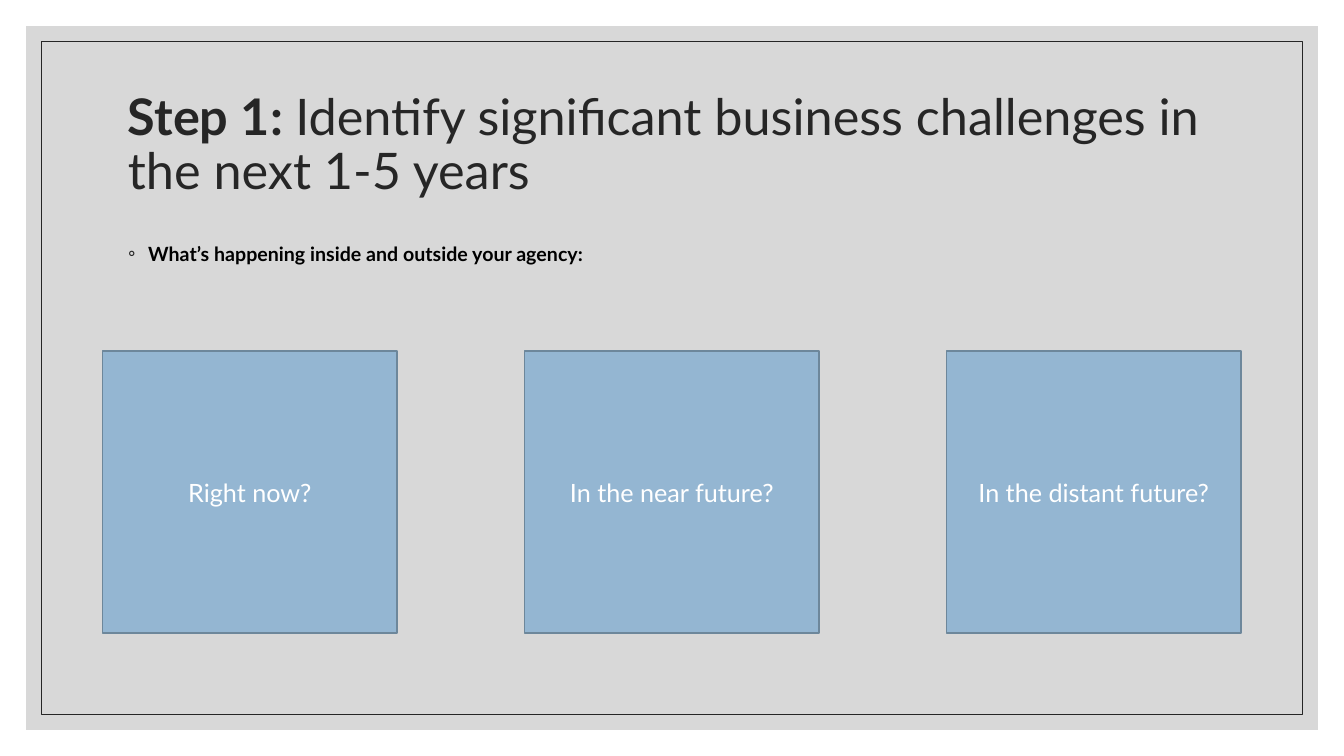
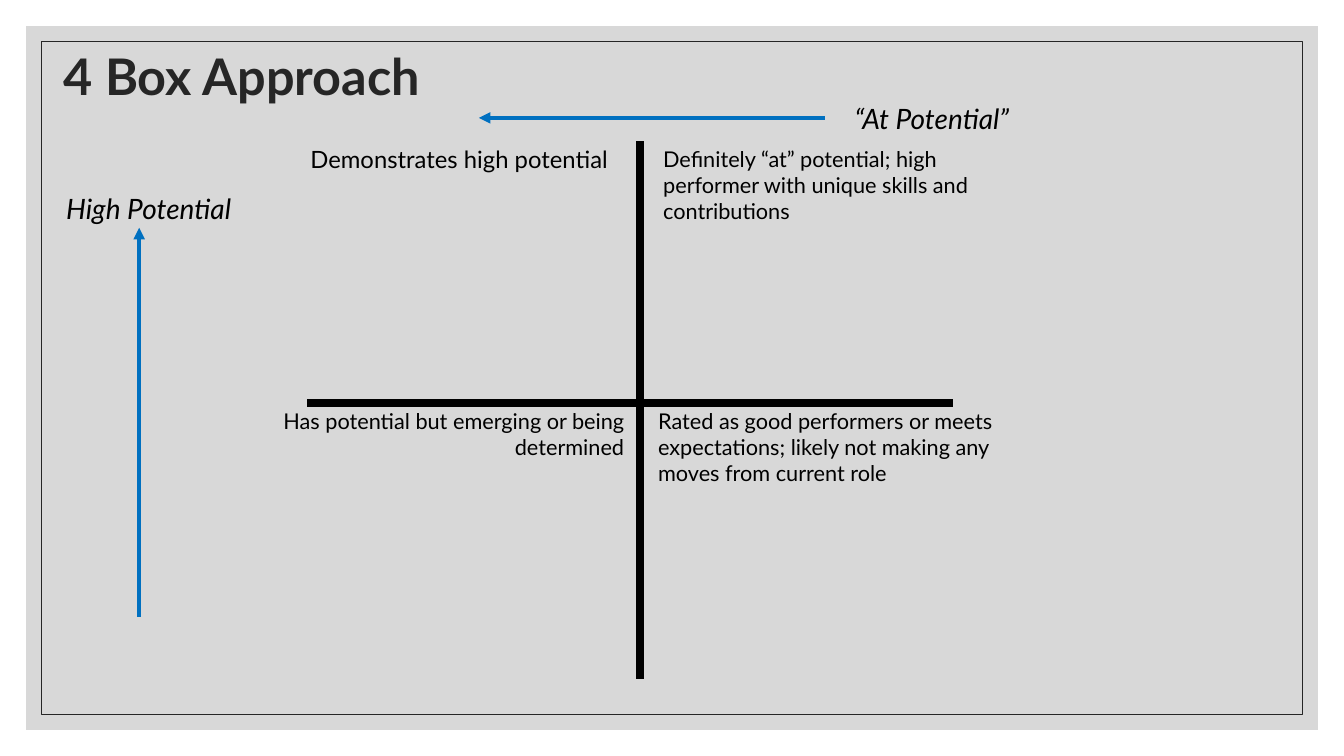
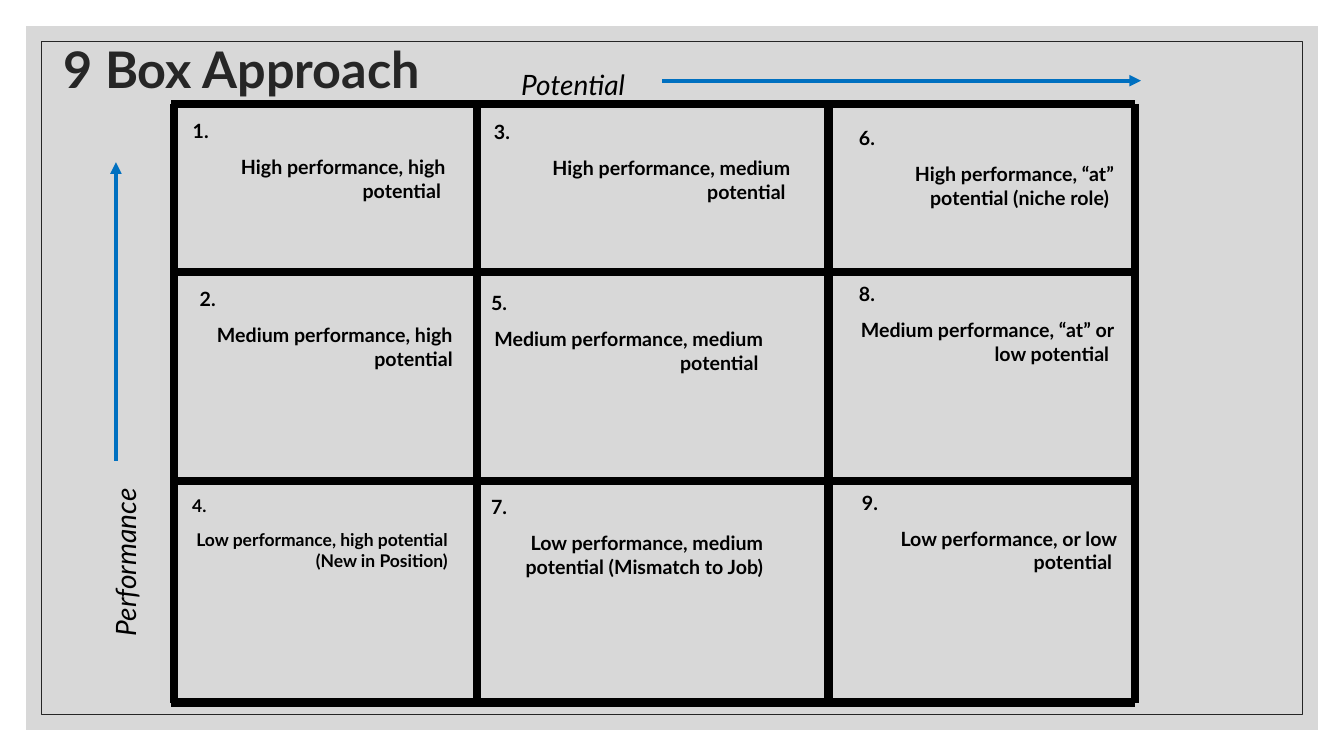
"""Build three slides on workforce planning and the 4 and 9 box approaches."""
from dataclasses import dataclass, replace
from typing import NamedTuple

from lxml import etree
from pptx import Presentation
from pptx import util as u
from pptx.dml import color
from pptx.enum import shapes, text
from pptx.oxml import ns
from pptx.slide import Slide

WIDTH, HEIGHT = 960, 540
FONT = "Lato"
BLACK, WHITE, DARK = "000000", "FFFFFF", "262626"
PANEL, TILE, TILE_EDGE, ARROW = "BFBFBF", "94B6D2", "6D879B", "0070C0"
LEFT, CENTER, RIGHT = text.PP_ALIGN.LEFT, text.PP_ALIGN.CENTER, text.PP_ALIGN.RIGHT
TOP, MIDDLE = text.MSO_ANCHOR.TOP, text.MSO_ANCHOR.MIDDLE


class Box(NamedTuple):
    left: float
    top: float
    width: float
    height: float


class Line(NamedTuple):
    x1: float
    y1: float
    x2: float
    y2: float


class Run(NamedTuple):
    words: str
    bold: bool = False


@dataclass(frozen=True)
class Style:
    size: float
    color: str = BLACK
    italic: bool = False
    align: text.PP_ALIGN = LEFT
    spacing: float = 1.0
    before: float = 0


class Note(NamedTuple):
    box: Box
    words: str
    style: Style


class Cell(NamedTuple):
    number: int
    left: float
    top: float
    width: float
    words: str
    size: float = 14


TITLE = Style(36, DARK, spacing=0.9)
BULLET = Style(14, spacing=1.2)
AXIS = Style(20, italic=True, align=CENTER, spacing=1.2)
TILE_LABEL = Style(18, WHITE, align=CENTER)
QUADRANT = Style(15.5)

TILES = ["Right now?", "In the near future?", "In the distant future?"]

QUADRANTS = [
    Note(Box(182.2, 98, 263.5, 47.5), "Demonstrates high potential ",
         Style(17, align=RIGHT, spacing=1.1)),
    Note(Box(189.4, 288, 263.5, 47.5), "Has potential but emerging or being determined",
         replace(QUADRANT, align=RIGHT)),
    Note(Box(463, 288, 283, 77),
         "Rated as good performers or meets expectations; "
         "likely not making any moves from current role", QUADRANT),
    Note(Box(466.6, 100.8, 279.4, 67),
         "Definitely “at” potential; high performer with unique skills and contributions",
         QUADRANT),
]

GRID_X = [124.6, 340.6, 591.8, 810.7]
GRID_Y = [74.2, 194.4, 343.4, 501.8]
GRID_OVERHANG = 2.2

CELLS = [
    Cell(1, 113.8, 81.4, 211.7, "High performance, high potential "),
    Cell(2, 118.8, 201.6, 211.7, "Medium performance, high potential"),
    Cell(4, 115.2, 350, 211.7, "Low performance, high potential (New in Position)", 12.5),
    Cell(3, 329, 82, 242.7, "High performance, medium potential "),
    Cell(5, 326.9, 204.5, 225.4, "Medium performance, medium potential "),
    Cell(7, 326.9, 350, 225.4, "Low performance, medium potential (Mismatch to Job)"),
    Cell(6, 589.7, 86.4, 213.1, "High performance, “at” potential (niche role) "),
    Cell(8, 589.7, 198, 213.1, "Medium performance, “at” or low potential "),
    Cell(9, 591.8, 347, 213.1, "Low performance, or low potential "),
]


def rgb(value: str) -> color.RGBColor:
    """Turn a hex string into a colour."""
    return color.RGBColor.from_string(value)


def points(values) -> list:
    """Turn numbers into lengths in points."""
    return [u.Pt(value) for value in values]


def write(paragraph, runs: list[Run], style: Style) -> None:
    """Format a paragraph and add its runs."""
    paragraph.alignment = style.align
    paragraph.line_spacing = style.spacing
    paragraph.space_before = u.Pt(style.before)
    for words, bold in runs:
        run = paragraph.add_run()
        run.text = words
        font = run.font
        font.name, font.size = FONT, u.Pt(style.size)
        font.bold, font.italic = bold, style.italic
        font.color.rgb = rgb(style.color)


def prepare(shape, anchor=TOP):
    """Set wrapping and anchor of a shape and return its first paragraph."""
    frame = shape.text_frame
    frame.word_wrap = True
    frame.auto_size = text.MSO_AUTO_SIZE.NONE
    frame.vertical_anchor = anchor
    return frame.paragraphs[0]


def indent(paragraph, left: float, first: float = 0, bullet: str = "") -> None:
    """Set the indents of a paragraph and its bullet, if any."""
    properties = paragraph._p.get_or_add_pPr()
    properties.set("marL", str(u.Pt(left)))
    properties.set("indent", str(u.Pt(first)))
    if bullet:
        holder = etree.SubElement(properties, ns.qn("a:buClr"))
        etree.SubElement(holder, ns.qn("a:srgbClr"), val=DARK)
        etree.SubElement(properties, ns.qn("a:buFont"), typeface=FONT)
        etree.SubElement(properties, ns.qn("a:buChar"), char=bullet)
    else:
        etree.SubElement(properties, ns.qn("a:buNone"))


def place(shape, box: Box) -> None:
    """Move and size a placeholder."""
    shape.left, shape.top, shape.width, shape.height = points(box)


def add_title(slide: Slide, left: float, top: float, runs: list[Run]) -> None:
    """Fill and place the title."""
    title = slide.shapes.title
    place(title, Box(left, top, 792, 108))
    write(prepare(title, MIDDLE), runs, TITLE)


def add_note(slide: Slide, note: Note) -> None:
    """Add a text box with one paragraph."""
    shape = slide.shapes.add_textbox(*points(note.box))
    write(prepare(shape), [Run(note.words)], note.style)


def add_axis_labels(slide: Slide, vertical: Note, horizontal: Note, rotation: float = 0) -> None:
    """Put the vertical axis label in the body and the other in a text box."""
    body = slide.placeholders[1]
    place(body, vertical.box)
    body.rotation = rotation
    paragraph = prepare(body)
    indent(paragraph, 0)
    write(paragraph, [Run(vertical.words)], vertical.style)
    add_note(slide, horizontal)


def axis_label(left: float, top: float, words: str) -> Note:
    """Describe an axis label."""
    return Note(Box(left, top, 180.7, 47.5), words, AXIS)


def add_line(slide: Slide, line: Line, hue: str = BLACK, weight: float = 5.75,
             arrow: bool = False) -> None:
    """Draw a straight line, with an arrowhead at its end if asked."""
    connector = slide.shapes.add_connector(shapes.MSO_CONNECTOR.STRAIGHT, *points(line))
    connector.line.color.rgb = rgb(hue)
    connector.line.width = u.Pt(weight)
    if arrow:
        etree.SubElement(connector.get_or_add_ln(), ns.qn("a:tailEnd"), type="triangle")
    etree.SubElement(connector.element.spPr, ns.qn("a:effectLst"))


def add_arrow(slide: Slide, line: Line) -> None:
    """Draw an axis arrow."""
    add_line(slide, line, ARROW, 2.75, arrow=True)


def add_rectangle(slide: Slide, box: Box, fill: str = "", edge: str = "", weight: float = 1):
    """Draw a rectangle without shadow."""
    shape = slide.shapes.add_shape(shapes.MSO_SHAPE.RECTANGLE, *points(box))
    shape.shadow.inherit = False
    if fill:
        shape.fill.solid()
        shape.fill.fore_color.rgb = rgb(fill)
    else:
        shape.fill.background()
    if edge:
        shape.line.color.rgb = rgb(edge)
        shape.line.width = u.Pt(weight)
    else:
        shape.line.fill.background()
    return shape


def inset(margin: float) -> Box:
    """Give the slide area less a margin on all sides."""
    return Box(margin, margin, WIDTH - 2 * margin, HEIGHT - 2 * margin)


def move_frame_to_master(presentation, slide: Slide) -> None:
    """Draw the shared panel and border and move them behind the master."""
    panel = add_rectangle(slide, inset(18.7), fill=PANEL)
    tone = panel.element.xpath("./p:spPr/a:solidFill/a:srgbClr")[0]
    etree.SubElement(tone, ns.qn("a:alpha"), val="60000")
    border = add_rectangle(slide, inset(29.5), edge=DARK, weight=0.5)
    tree = presentation.slide_master.shapes.element
    for position, shape in enumerate((panel, border)):
        shape.element.xpath("./p:nvSpPr/p:cNvPr")[0].set("id", str(100 + position))
        tree.insert(2 + position, shape.element)


def build_challenges(slide: Slide) -> None:
    """Fill the slide on business challenges."""
    add_title(slide, 84.2, 50.4, [
        Run("Step 1: ", True),
        Run("Identify significant business challenges in the next 1-5 years"),
    ])
    body = slide.placeholders[1]
    place(body, Box(84.2, 165.6, 792, 303))
    paragraph = prepare(body)
    indent(paragraph, 14.4, -14.4, "◦")
    write(paragraph, [Run("What’s happening inside and outside your agency:", True)], BULLET)
    for index, words in enumerate(TILES):
        box = Box(73.4 + index * 301.4, 250.6, 210.2, 201.6)
        tile = add_rectangle(slide, box, TILE, TILE_EDGE)
        write(prepare(tile, MIDDLE), [Run(words)], TILE_LABEL)


def build_four_box(slide: Slide) -> None:
    """Fill the slide on the 4 box approach."""
    add_title(slide, 38.2, 2.9, [Run("4 Box Approach", True)])
    add_line(slide, Line(457.2, 100.8, 457.2, 485.3))
    add_line(slide, Line(680.4, 288, 219.6, 288))
    add_arrow(slide, Line(99.4, 440.6, 99.4, 162.7))
    add_arrow(slide, Line(589, 84.2, 342, 84.2))
    add_axis_labels(slide, axis_label(15.8, 128.2, "High Potential"),
                    axis_label(575.3, 64.1, "“At Potential”"))
    for note in QUADRANTS:
        add_note(slide, note)


def add_cell(slide: Slide, cell: Cell) -> None:
    """Add the number and description of one grid cell."""
    shape = slide.shapes.add_textbox(*points((cell.left, cell.top, cell.width, 72)))
    style = Style(cell.size)
    number = prepare(shape)
    indent(number, 1.2 * cell.size)
    write(number, [Run(f"{cell.number}.", True)], style)
    description = shape.text_frame.add_paragraph()
    write(description, [Run(cell.words, True)], replace(style, align=RIGHT, before=9))


def build_nine_box(slide: Slide) -> None:
    """Fill the slide on the 9 box approach."""
    add_title(slide, 38.2, -2.2, [Run("9 Box Approach", True)])
    for x in GRID_X:
        add_line(slide, Line(x, GRID_Y[0], x, GRID_Y[-1]))
    for y in GRID_Y:
        add_line(slide, Line(GRID_X[0] - GRID_OVERHANG, y, GRID_X[-1], y))
    add_arrow(slide, Line(82.8, 329, 82.8, 115.9))
    add_arrow(slide, Line(473, 57.6, 815, 57.6))
    add_axis_labels(slide, axis_label(2.2, 378, "Performance"),
                    axis_label(319, 39.6, "Potential"), rotation=270)
    for cell in CELLS:
        add_cell(slide, cell)


def main() -> None:
    """Build and save the presentation."""
    presentation = Presentation()
    presentation.slide_width, presentation.slide_height = points((WIDTH, HEIGHT))
    layout = presentation.slide_layouts[1]
    builders = (build_challenges, build_four_box, build_nine_box)
    slides = [presentation.slides.add_slide(layout) for _ in builders]
    move_frame_to_master(presentation, slides[0])
    for build, slide in zip(builders, slides):
        build(slide)
    presentation.save("out.pptx")


if __name__ == "__main__":
    main()
